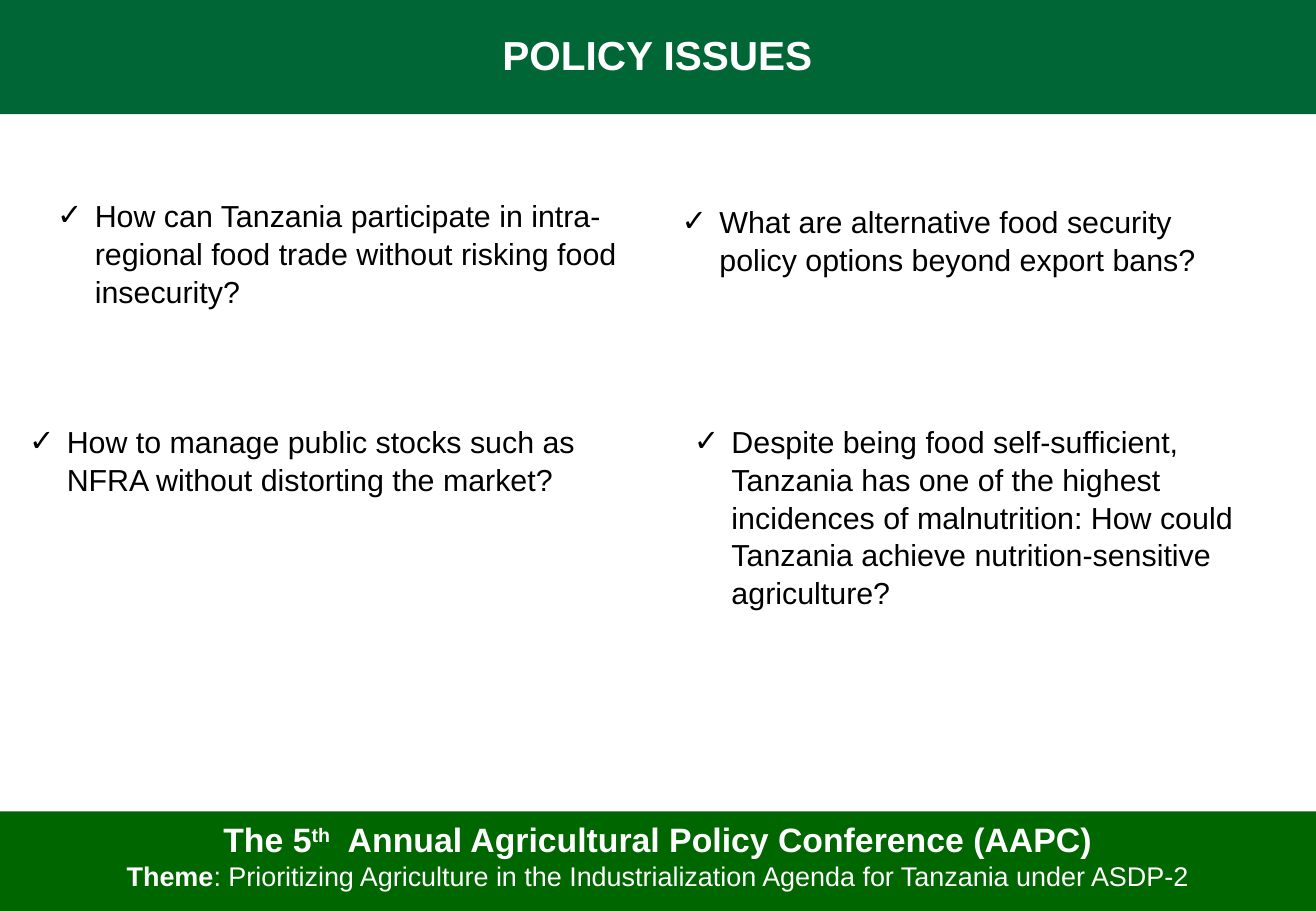
"""Build the policy issues slide of the agricultural policy conference."""
from dataclasses import dataclass

from lxml import etree
from pptx import Presentation
from pptx.dml.color import RGBColor
from pptx.enum.shapes import MSO_SHAPE
from pptx.enum.text import MSO_ANCHOR, MSO_AUTO_SIZE, PP_ALIGN
from pptx.oxml.ns import qn
from pptx.util import Inches, Pt

RECTANGLE = MSO_SHAPE.RECTANGLE
TOP, MIDDLE = MSO_ANCHOR.TOP, MSO_ANCHOR.MIDDLE
LEFT, CENTER = PP_ALIGN.LEFT, PP_ALIGN.CENTER
NO_AUTOFIT = MSO_AUTO_SIZE.NONE

HEADER_GREEN = RGBColor(0x00, 0x66, 0x35)
FOOTER_GREEN = RGBColor(0x00, 0x66, 0x00)
WHITE = RGBColor(0xFF, 0xFF, 0xFF)
BLACK = RGBColor(0x00, 0x00, 0x00)

FONT = "Arial"
SLIDE_WIDTH, SLIDE_HEIGHT = Inches(10.83), Inches(7.5)
COMPARISON_LAYOUT = 4
HANGING_INDENT = Inches(0.31)


@dataclass(frozen=True)
class Area:
    """A rectangle in percent of the slide's width and height."""
    left: float
    top: float
    width: float
    height: float

    def lengths(self) -> tuple[int, int, int, int]:
        """Return left, top, width and height as slide lengths."""
        return (round(SLIDE_WIDTH * self.left / 100), round(SLIDE_HEIGHT * self.top / 100),
                round(SLIDE_WIDTH * self.width / 100), round(SLIDE_HEIGHT * self.height / 100))


@dataclass(frozen=True)
class Issue:
    """One policy question and its place."""
    text: str
    area: Area


@dataclass(frozen=True)
class Segment:
    """A stretch of footer text in one format."""
    text: str
    size: int
    bold: bool = True
    superscript: bool = False


HEADER_AREA = Area(-0.09, 0, 100.18, 12.53)
TITLE_AREA = Area(6.83, 0.8, 86.24, 11.07)
FOOTER_AREA = Area(0, 89.07, 100, 11.87)

ISSUES = [
    Issue("How can Tanzania participate in intra-regional food trade without risking food "
          "insecurity?", Area(3.42, 20.8, 48.38, 13.47)),
    Issue("What are alternative food security policy options beyond export bans?",
          Area(50.88, 21.47, 44.04, 9.47)),
    Issue("How to manage public stocks such as NFRA without distorting the market?",
          Area(1.29, 45.6, 46.63, 9.47)),
    Issue("Despite being food self-sufficient, Tanzania has one of the highest incidences of "
          "malnutrition: How could Tanzania achieve nutrition-sensitive agriculture?",
          Area(51.8, 45.6, 44.04, 21.6)),
]

FOOTER_LINES = [
    [Segment("The 5", 20), Segment("th", 20, superscript=True),
     Segment("  Annual Agricultural Policy Conference (AAPC)", 20)],
    [Segment("Theme", 16),
     Segment(": Prioritizing Agriculture in the Industrialization Agenda for Tanzania "
             "under ASDP-2", 16, bold=False)],
]


def format_run(run, size: int, color: RGBColor, bold: bool) -> None:
    """Set the font of a run."""
    run.font.name = FONT
    run.font.size = Pt(size)
    run.font.bold = bold
    run.font.color.rgb = color


def place(shape, area: Area) -> None:
    """Move and size a shape."""
    shape.left, shape.top, shape.width, shape.height = area.lengths()


def add_band(slide, area: Area, color: RGBColor):
    """Add a plain coloured band behind the placeholders."""
    band = slide.shapes.add_shape(RECTANGLE, *area.lengths())
    band.shadow.inherit = False
    band.fill.solid()
    band.fill.fore_color.rgb = color
    band.line.fill.background()
    slide.shapes._spTree.insert(2, band._element)
    return band


def fill_placeholder(shape, text: str, area: Area, anchor: MSO_ANCHOR, alignment: PP_ALIGN,
                     line_spacing: float, size: int, color: RGBColor, bold: bool):
    """Place a placeholder, write its text and return its paragraph."""
    place(shape, area)
    frame = shape.text_frame
    frame.text = text
    frame.word_wrap = True
    frame.auto_size = NO_AUTOFIT
    frame.vertical_anchor = anchor
    paragraph = frame.paragraphs[0]
    paragraph.alignment = alignment
    paragraph.line_spacing = line_spacing
    paragraph.space_before = Pt(0)
    format_run(paragraph.runs[0], size, color, bold)
    return paragraph


def add_check_bullet(paragraph) -> None:
    """Give a paragraph a hanging check mark."""
    properties = paragraph._p.get_or_add_pPr()
    properties.set("marL", str(HANGING_INDENT))
    properties.set("indent", str(-HANGING_INDENT))
    etree.SubElement(properties, qn("a:buFont")).set("typeface", FONT)
    etree.SubElement(properties, qn("a:buChar")).set("char", "✓")


def write_footer(band) -> None:
    """Write the conference name and theme in the footer band."""
    frame = band.text_frame
    frame.word_wrap = True
    frame.vertical_anchor = TOP
    frame.margin_top = Inches(0.06)
    for index, segments in enumerate(FOOTER_LINES):
        paragraph = frame.add_paragraph() if index else frame.paragraphs[0]
        paragraph.alignment = CENTER
        for segment in segments:
            run = paragraph.add_run()
            run.text = segment.text
            format_run(run, segment.size, WHITE, segment.bold)
            if segment.superscript:
                run._r.get_or_add_rPr().set("baseline", "30000")


def main() -> None:
    """Create and save the presentation."""
    presentation = Presentation()
    presentation.slide_width, presentation.slide_height = SLIDE_WIDTH, SLIDE_HEIGHT
    slide = presentation.slides.add_slide(presentation.slide_layouts[COMPARISON_LAYOUT])
    title, *bodies = slide.placeholders

    add_band(slide, HEADER_AREA, HEADER_GREEN)
    fill_placeholder(title, "POLICY ISSUES", TITLE_AREA, MIDDLE, CENTER, 0.9, 24, WHITE, True)
    write_footer(add_band(slide, FOOTER_AREA, FOOTER_GREEN))
    for body, issue in zip(bodies, ISSUES):
        paragraph = fill_placeholder(body, issue.text, issue.area, TOP, LEFT, 1.04, 18,
                                     BLACK, False)
        add_check_bullet(paragraph)

    presentation.save("out.pptx")


if __name__ == "__main__":
    main()
